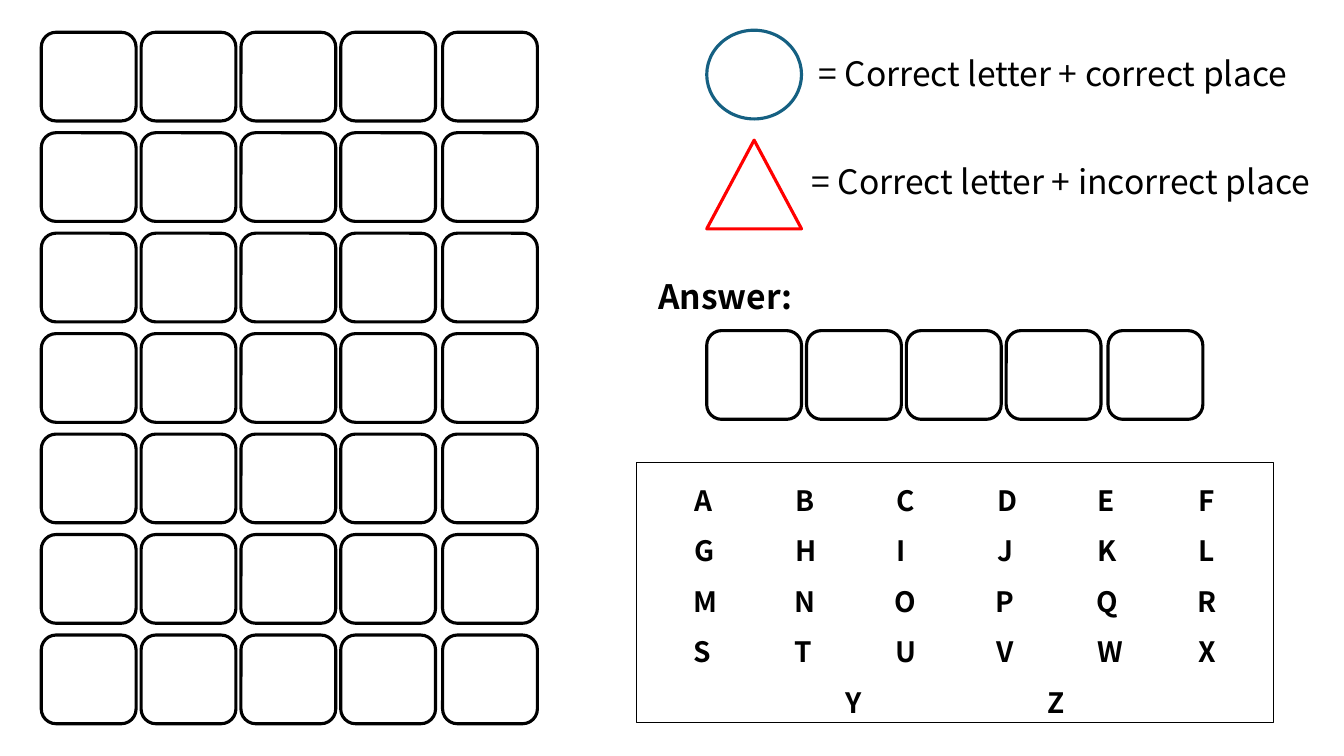
from dataclasses import dataclass
from typing import Any, Optional

from pptx import Presentation
from pptx.dml import color
from pptx.enum import shapes, text
from pptx.util import Inches, Pt

KIND = shapes.MSO_SHAPE
ALIGN = text.PP_ALIGN


@dataclass(frozen=True)
class Theme:
    font: str = "Noto Sans CJK JP"
    ink: str = "000000"
    paper: str = "FFFFFF"
    blue: str = "156082"
    red: str = "FF0000"
    label: int = 24
    letter: int = 20
    thick: float = 2.25
    thin: float = 0.75


@dataclass(frozen=True)
class Box:
    left: float
    top: float
    width: float
    height: float

    def place(self) -> tuple[int, ...]:
        return tuple(Inches(n) for n in (self.left, self.top, self.width, self.height))


@dataclass(frozen=True)
class Grid:
    left: float
    top: float
    rows: int


@dataclass(frozen=True)
class Clue:
    kind: Any
    top: float
    line: str
    words: str
    box: Box


THEME = Theme()
TILE_W, TILE_H = 0.94, 0.88
COLS = (0, 0.99, 1.98, 2.97, 3.98)
STEP = 5.98 / 6

GRIDS = [Grid(7.01, 3.28, 1), Grid(0.41, 0.32, 7)]
CLUES = [
    Clue(KIND.OVAL, 0.3, THEME.blue, "= Correct letter + correct place",
         Box(8.02, 0.48, 5.25, 0.5)),
    Clue(KIND.ISOSCELES_TRIANGLE, 1.39, THEME.red, "= Correct letter + incorrect place",
         Box(7.95, 1.55, 5.32, 0.5)),
]
LETTERS = ["ABCDEF", "GHIJKL", "MNOPQR", "STUVWX"]


def draw(pool: Any, kind: Any, box: Box, line: str = THEME.ink,
         width: float = THEME.thick, fill: Optional[str] = None) -> Any:
    shape = pool.add_shape(kind, *box.place())
    shape.shadow.inherit = False
    if fill:
        shape.fill.solid()
        shape.fill.fore_color.rgb = color.RGBColor.from_string(fill)
    else:
        shape.fill.background()
    shape.line.color.rgb = color.RGBColor.from_string(line)
    shape.line.width = Pt(width)
    return shape


def write(shape: Any, words: str, *, size: int = THEME.label, bold: bool = False,
          align: Any = ALIGN.LEFT, space: float = 1.0, tab: float = 1.0) -> None:
    frame = shape.text_frame
    frame.word_wrap = True
    frame.auto_size = text.MSO_AUTO_SIZE.SHAPE_TO_FIT_TEXT
    frame.text = words
    for para in frame.paragraphs:
        para.alignment = align
        para.line_spacing = space
        para._p.get_or_add_pPr().set("defTabSz", str(Inches(tab)))
        for run in para.runs:
            run.font.name = THEME.font
            run.font.size = Pt(size)
            run.font.bold = bold
            run.font.color.rgb = color.RGBColor.from_string(THEME.ink)


def tile(pool: Any, grid: Grid) -> None:
    group = pool.add_group_shape()
    for row in range(grid.rows):
        for col in COLS:
            box = Box(grid.left + col, grid.top + row * STEP, TILE_W, TILE_H)
            draw(group.shapes, KIND.ROUNDED_RECTANGLE, box, fill=THEME.paper)


def main() -> None:
    deck = Presentation()
    deck.slide_width, deck.slide_height = Inches(13.33), Inches(7.5)
    pool = deck.slides.add_slide(deck.slide_layouts[6]).shapes

    for grid in GRIDS:
        tile(pool, grid)

    bank = draw(pool, KIND.RECTANGLE, Box(6.31, 4.59, 6.32, 2.58), width=THEME.thin)
    lines = ["\t".join(row) for row in LETTERS] + ["Y\t\tZ"]
    write(bank, "\n".join(lines), size=THEME.letter, bold=True,
          align=ALIGN.CENTER, space=1.5)

    title = pool.add_textbox(*Box(6.43, 2.69, 1.57, 0.5).place())
    write(title, "Answer:", bold=True)

    for clue in CLUES:
        draw(pool, clue.kind, Box(7.01, clue.top, TILE_W, TILE_H), line=clue.line)
        write(pool.add_textbox(*clue.box.place()), clue.words)

    deck.save("out.pptx")


if __name__ == "__main__":
    main()
